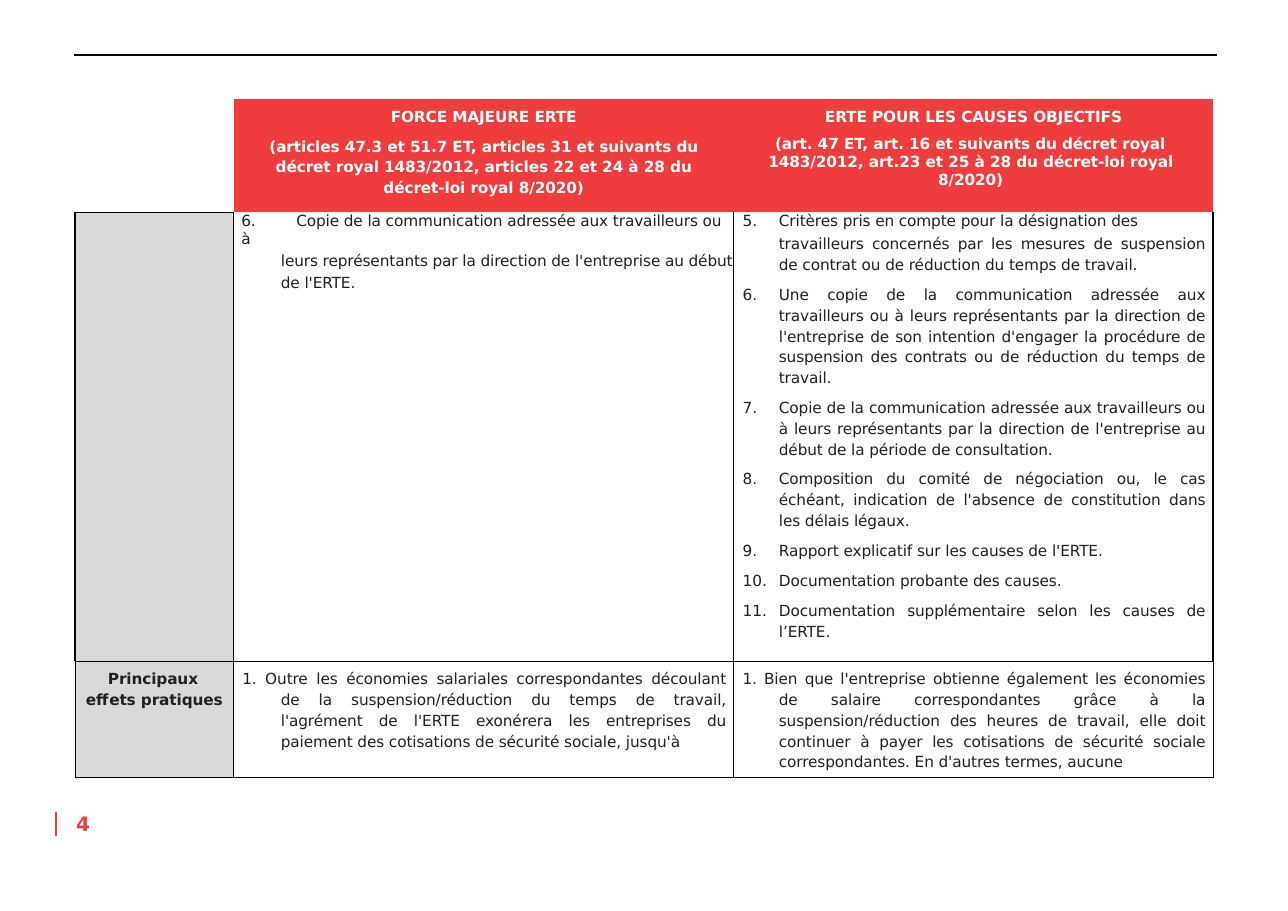
from lxml.etree import SubElement
from pptx import Presentation
from pptx.dml.color import RGBColor
from pptx.enum.shapes import MSO_CONNECTOR
from pptx.enum.text import PP_ALIGN as Align
from pptx.oxml.ns import qn
from pptx.util import Pt

PX = 9144  # 100 px to the inch
FONT = "DejaVu Sans"
RED, GREY, INK, BLACK, WHITE = "EF3D3D", "D9D9D9", "212121", "000000", "FFFFFF"
NO_STYLE = "{2D5ABB26-0587-4C30-8999-92F81FD0307C}"

# Paragraph styles: left, right and first indent in px; spacing in points or lines
HEAD = dict(align=Align.CENTER, before=6, bold=True, color=WHITE)
LEFT_ARTICLES = HEAD | dict(left=29, right=29, lines=1.17)
RIGHT_ARTICLES = HEAD | dict(left=28, right=33, first=-1, lines=1.01)
LABEL = dict(left=10, first=20, lines=1.17, before=4.2, bold=True)
COPY = dict(left=7, lines=Pt(11.6), tab=43)
COPY_REST = dict(left=43, lines=Pt(14), before=0.7)
JUSTIFIED = dict(align=Align.JUSTIFY, left=41, right=7)
CRITERIA = JUSTIFIED | dict(first=-33, lines=Pt(11.6), start=5, tab=41)
CRITERIA_REST = JUSTIFIED | dict(lines=Pt(14), before=0.7)
ITEM = JUSTIFIED | dict(first=-33, lines=1.17, before=5.9, start=6, tab=41)
SHORT_ITEM = ITEM | dict(lines=1.0, before=8)
LEFT_EFFECT = JUSTIFIED | dict(left=43, first=-35, lines=1.17, before=4.3)
RIGHT_EFFECT = JUSTIFIED | dict(first=-33, lines=1.17, before=4.3)

COLUMNS = [144, 454, 435]
ROWS = [  # height, top inset, cells
    (103, 8, [
        [],
        [("FORCE MAJEURE ERTE", HEAD),
         ("(articles 47.3 et 51.7 ET, articles 31 et suivants du décret royal 1483/2012, "
          "articles 22 et 24 à 28 du décret-loi royal 8/2020)", LEFT_ARTICLES)],
        [("ERTE POUR LES CAUSES OBJECTIFS", HEAD),
         ("(art. 47 ET, art. 16 et suivants du décret royal 1483/2012, "
          "art.23 et 25 à 28 du décret-loi royal 8/2020)", RIGHT_ARTICLES)],
    ]),
    (407, 0, [
        [],
        [("6.\tCopie de la communication adressée aux travailleurs ou à", COPY),
         ("leurs représentants par la direction de l'entreprise au début de l'ERTE.", COPY_REST)],
        [("Critères pris en compte pour la désignation des", CRITERIA),
         ("travailleurs concernés par les mesures de suspension de contrat "
          "ou de réduction du temps de travail.", CRITERIA_REST),
         ("Une copie de la communication adressée aux travailleurs ou à leurs représentants "
          "par la direction de l'entreprise de son intention d'engager la procédure de "
          "suspension des contrats ou de réduction du temps de travail.", ITEM),
         ("Copie de la communication adressée aux travailleurs ou à leurs représentants "
          "par la direction de l'entreprise au début de la période de consultation.", ITEM),
         ("Composition du comité de négociation ou, le cas échéant, indication "
          "de l'absence de constitution dans les délais légaux.", ITEM),
         ("Rapport explicatif sur les causes de l'ERTE.", SHORT_ITEM),
         ("Documentation probante des causes.", SHORT_ITEM),
         ("Documentation supplémentaire selon les causes de l’ERTE.", ITEM)],
    ]),
    (106, 6, [
        [("Principaux effets pratiques", LABEL)],
        [("1. Outre les économies salariales correspondantes découlant de la "
          "suspension/réduction du temps de travail, l'agrément de l'ERTE exonérera les "
          "entreprises du paiement des cotisations de sécurité sociale, jusqu'à", LEFT_EFFECT)],
        [("1. Bien que l'entreprise obtienne également les économies de salaire "
          "correspondantes grâce à la suspension/réduction des heures de travail, elle doit "
          "continuer à payer les cotisations de sécurité sociale correspondantes. "
          "En d'autres termes, aucune", RIGHT_EFFECT)],
    ]),
]
FILLS = [[None, RED, RED], [GREY, None, None], [GREY, None, None]]

# Borders: side -> (colour, points)
THIN, THICK, HIDDEN = (BLACK, 0.5), (BLACK, 1), (WHITE, 1)
BODY = dict(L=THICK, R=THICK, T=HIDDEN, B=THIN)
GRID = dict(L=THIN, R=THIN, T=THIN, B=THIN)
BORDERS = [[dict(B=THICK), dict(B=HIDDEN), dict(B=HIDDEN)],
           [BODY | dict(T=THICK), BODY, BODY],
           [GRID, GRID, GRID]]

RULES = [((67, 50), (1105, 50), BLACK, 1.25), ((51, 737), (51, 759), RED, 1.5)]
PAGE_NUMBER = "4"


def rgb(value):
    return RGBColor.from_string(value)


def write(paragraph, text, align=Align.LEFT, left=0, right=0, first=0, lines=1.0,
          before=0, start=None, tab=None, bold=False, color=INK, size=10):
    run = paragraph.add_run()
    run.text = text
    run.font._element.set("spc", "-5")
    paragraph.alignment = align
    paragraph.line_spacing = lines
    paragraph.space_before = Pt(before)
    font = paragraph.font
    font.name, font.size, font.bold = FONT, Pt(size), bold
    font.color.rgb = rgb(color)
    props = paragraph._p.get_or_add_pPr()
    for name, value in (("marL", left), ("marR", right), ("indent", first)):
        props.set(name, str(value * PX))
    settings = []
    if start:
        bullet = SubElement(props, qn("a:buAutoNum"), type="arabicPeriod", startAt=str(start))
        settings.append(bullet)
    if tab:
        stops = SubElement(props, qn("a:tabLst"))
        SubElement(stops, qn("a:tab"), pos=str(tab * PX), algn="l")
        settings.append(stops)
    defaults = props.find(qn("a:defRPr"))
    for setting in settings:
        defaults.addprevious(setting)


def write_all(frame, paragraphs):
    for index, (text, style) in enumerate(paragraphs):
        paragraph = frame.add_paragraph() if index else frame.paragraphs[0]
        write(paragraph, text, **style)
        # runs carry the font too, so that table defaults do not win
        source, target = paragraph.font, paragraph.runs[0].font
        target.name, target.size, target.bold = source.name, source.size, source.bold
        target.color.rgb = source.color.rgb


def draw_borders(cell, borders):
    props = cell._tc.get_or_add_tcPr()
    for side in "LRTB":
        color, width = borders.get(side, (None, 0))
        line = SubElement(props, qn(f"a:ln{side}"), w=str(Pt(width)))
        if color:
            solid = SubElement(line, qn("a:solidFill"))
            SubElement(solid, qn("a:srgbClr"), val=color)
        else:
            SubElement(line, qn("a:noFill"))


def add_rule(slide, begin, end, color, width):
    ends = [value * PX for value in begin + end]
    rule = slide.shapes.add_connector(MSO_CONNECTOR.STRAIGHT, *ends)
    rule.line.color.rgb = rgb(color)
    rule.line.width = Pt(width)
    SubElement(rule._element.spPr, qn("a:effectLst"))


def add_comparison(slide):
    height = sum(row[0] for row in ROWS)
    box = [value * PX for value in (68, 90, sum(COLUMNS), height)]
    table = slide.shapes.add_table(len(ROWS), len(COLUMNS), *box).table
    table.first_row = table.horz_banding = False
    table._tbl.tblPr.find(qn("a:tableStyleId")).text = NO_STYLE
    for column, width in zip(table.columns, COLUMNS):
        column.width = width * PX
    for r, (row_height, inset, cells) in enumerate(ROWS):
        table.rows[r].height = row_height * PX
        for c, paragraphs in enumerate(cells):
            cell = table.cell(r, c)
            cell.margin_left = cell.margin_right = cell.margin_bottom = 0
            cell.margin_top = inset * PX
            draw_borders(cell, BORDERS[r][c])
            if FILLS[r][c]:
                cell.fill.solid()
                cell.fill.fore_color.rgb = rgb(FILLS[r][c])
            else:
                cell.fill.background()
            write_all(cell.text_frame, paragraphs)


def add_page_number(slide):
    box = [value * PX for value in (65, 736, 21, 23)]
    frame = slide.shapes.add_textbox(*box).text_frame
    frame.word_wrap = True
    frame.margin_left = frame.margin_right = frame.margin_bottom = 0
    frame.margin_top = PX
    write_all(frame, [(PAGE_NUMBER, dict(left=4, before=1, bold=True, color=RED, size=13))])


def main():
    deck = Presentation()
    deck.slide_width, deck.slide_height = 1169 * PX, 827 * PX
    slide = deck.slides.add_slide(deck.slide_layouts[6])
    for rule in RULES:
        add_rule(slide, *rule)
    add_comparison(slide)
    add_page_number(slide)
    deck.save("out.pptx")


if __name__ == "__main__":
    main()
